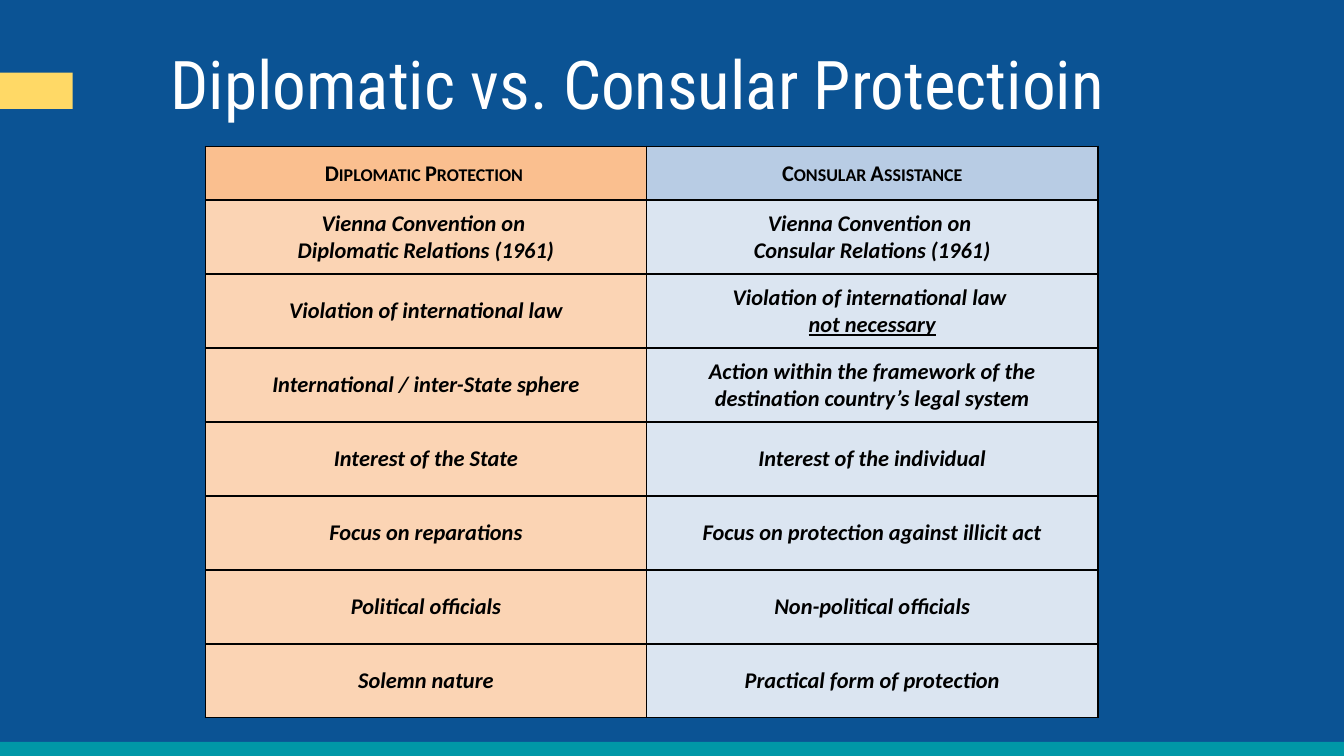
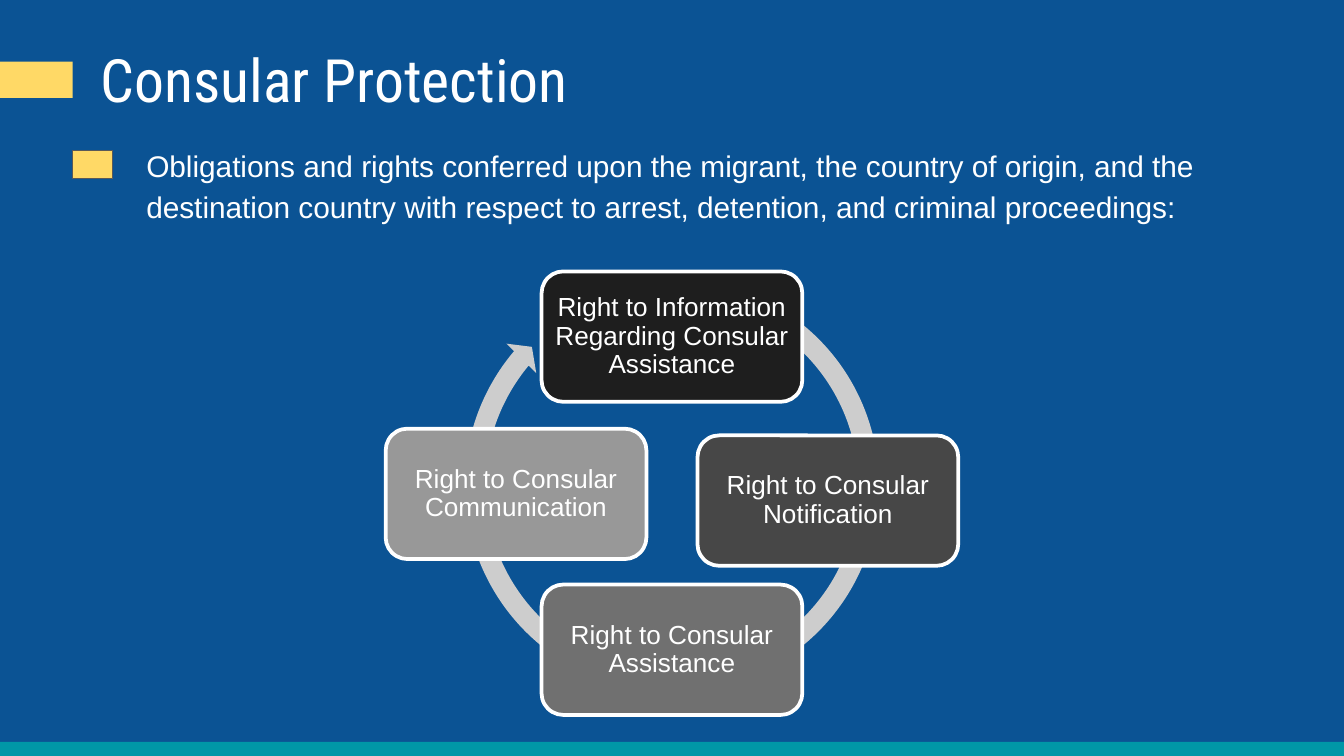
from lxml.etree import SubElement
from pptx import Presentation
from pptx.dml.color import RGBColor
from pptx.enum.shapes import MSO_SHAPE
from pptx.enum.text import MSO_ANCHOR, PP_ALIGN
from pptx.oxml.ns import qn
from pptx.util import Inches, Pt

BLUE, TEAL, YELLOW = "0B5394", "0097A7", "FFD966"
WHITE, BLACK = "FFFFFF", "000000"
TITLE_FONT, BODY_FONT, TABLE_FONT = "Roboto Condensed", "Arial", "Calibri"


def write(frame, text, font, size, color=WHITE, align=PP_ALIGN.LEFT, spacing=1.0,
          space=0, bold=False, italic=False, small_caps=False, underlined_line=None):
    """Fill a text frame with one paragraph; a newline is a line break."""
    frame.word_wrap = True
    paragraph = frame.paragraphs[0]
    paragraph.alignment = align
    paragraph.line_spacing = spacing
    paragraph.space_before = paragraph.space_after = Pt(space)
    for index, line in enumerate(text.split("\n")):
        if index:
            paragraph.add_line_break()
        run = paragraph.add_run()
        run.text = line
        run.font.name, run.font.size = font, Pt(size)
        run.font.bold, run.font.italic = bold, italic
        run.font.underline = index == underlined_line
        run.font.color.rgb = RGBColor.from_string(color)
        if small_caps:
            run._r.get_or_add_rPr().set("cap", "small")


def add_box(slide, kind, left, top, width, height, fill, line=None, line_width=1):
    shape = slide.shapes.add_shape(
        kind, Inches(left), Inches(top), Inches(width), Inches(height))
    shape.shadow.inherit = False
    shape.fill.solid()
    shape.fill.fore_color.rgb = RGBColor.from_string(fill)
    if line:
        shape.line.color.rgb = RGBColor.from_string(line)
        shape.line.width = Pt(line_width)
    else:
        shape.line.fill.background()
    return shape


# Widescreen page, 16 to 9
presentation = Presentation()
presentation.slide_width, presentation.slide_height = Inches(10), Inches(10 * 9 / 16)

# Shared frame: background, title, yellow tab, teal footer band
slides = []
for title, size, align, tab_top in [
    ("Diplomatic vs. Consular Protectioin", 36, PP_ALIGN.CENTER, 0.54),
    ("Consular Protection", 32, PP_ALIGN.LEFT, 0.46),
]:
    slide = presentation.slides.add_slide(presentation.slide_layouts[6])
    slide.background.fill.solid()
    slide.background.fill.fore_color.rgb = RGBColor.from_string(BLUE)
    title_box = slide.shapes.add_textbox(
        Inches(0.65), Inches(0.28), Inches(8.19), Inches(0.97))
    frame = title_box.text_frame
    frame.margin_top = frame.margin_bottom = Inches(0.1)
    write(frame, title, TITLE_FONT, size, align=align, spacing=0.9)
    add_box(slide, MSO_SHAPE.RECTANGLE, -0.11, tab_top, 0.65, 0.27, YELLOW)
    add_box(slide, MSO_SHAPE.RECTANGLE, 0, 5.52, 10, 0.11, TEAL)
    slides.append(slide)
comparison_slide, rights_slide = slides

# Slide 1: comparison table
comparisons = [
    ("Diplomatic Protection ", "Consular Assistance"),
    ("Vienna Convention on \nDiplomatic Relations (1961)",
     "Vienna Convention on \nConsular Relations (1961)"),
    ("Violation of international law", "Violation of international law \nnot necessary"),
    ("International / inter-State sphere",
     "Action within the framework of the destination country’s legal system"),
    ("Interest of the State", "Interest of the individual"),
    ("Focus on reparations", "Focus on protection against illicit act"),
    ("Political officials", "Non-political officials"),
    ("Solemn nature", "Practical form of protection"),
]
header_fills, body_fills = ("FABF8F", "B8CCE4"), ("FBD4B4", "DBE5F1")

table = comparison_slide.shapes.add_table(
    len(comparisons), 2, Inches(1.53), Inches(1.09), Inches(6.64), Inches(4.25)).table
table.first_row = table.horz_banding = False
table.columns[0].width, table.columns[1].width = Inches(3.28), Inches(3.36)

for row_index, texts in enumerate(comparisons):
    header = row_index == 0
    table.rows[row_index].height = Inches(0.4 if header else 0.55)
    for column_index, text in enumerate(texts):
        cell = table.cell(row_index, column_index)
        cell.vertical_anchor = MSO_ANCHOR.MIDDLE
        cell.margin_left = cell.margin_right = Inches(0.07)
        cell.margin_top = cell.margin_bottom = 0
        write(cell.text_frame, text, TABLE_FONT, 12, color=BLACK, align=PP_ALIGN.CENTER,
              space=6 if header else 0, bold=True, italic=not header, small_caps=header,
              underlined_line=1 if "not necessary" in text else None)
        # Borders, heavier under the header
        for side in ("L", "R", "T", "B"):
            heavy = (row_index, side) in ((0, "B"), (1, "T"))
            border = SubElement(cell._tc.get_or_add_tcPr(), qn(f"a:ln{side}"),
                                w=str(Pt(1.5 if heavy else 1)))
            border_fill = SubElement(border, qn("a:solidFill"))
            SubElement(border_fill, qn("a:srgbClr"), val=BLACK)
        cell.fill.solid()
        fills = header_fills if header else body_fills
        cell.fill.fore_color.rgb = RGBColor.from_string(fills[column_index])

# Slide 2: introduction with its square marker
introduction = rights_slide.shapes.add_textbox(
    Inches(0.99), Inches(0.96), Inches(8.07), Inches(1.01))
introduction.text_frame.margin_top = introduction.text_frame.margin_bottom = Inches(0.1)
write(introduction.text_frame,
      "Obligations and rights conferred upon the migrant, the country of origin, and the "
      "destination country with respect to arrest, detention, and criminal proceedings:",
      BODY_FONT, 16, spacing=1.15)
add_box(rights_slide, MSO_SHAPE.RECTANGLE, 0.54, 1.12, 0.3, 0.21, YELLOW, "595959", 0.75)

# Slide 2: cycle arrow behind the four rights
cycle_arrow = add_box(
    rights_slide, MSO_SHAPE.CIRCULAR_ARROW, 3.38, 1.99, 3.24, 3.24, "CDCDCD")
for index, value in enumerate((0.047, 2.729, 132.055, 177.813, 0.048)):
    cycle_arrow.adjustments[index] = value

for text, left, top, fill in [
    ("Right to Information Regarding Consular Assistance", 4.03, 2.02, "1E1E1E"),
    ("Right to Consular Notification", 5.19, 3.24, "474747"),
    ("Right to Consular Assistance", 4.03, 4.35, "707070"),
    ("Right to Consular Communication", 2.87, 3.19, "989898"),
]:
    right_box = add_box(rights_slide, MSO_SHAPE.ROUNDED_RECTANGLE,
                        left, top, 1.94, 0.97, fill, WHITE, 2)
    frame = right_box.text_frame
    frame.vertical_anchor = MSO_ANCHOR.MIDDLE
    frame.margin_left = frame.margin_right = Inches(0.01)
    frame.margin_top = frame.margin_bottom = Inches(0.01)
    write(frame, text, BODY_FONT, 14, align=PP_ALIGN.CENTER, spacing=0.9)

presentation.save("out.pptx")
